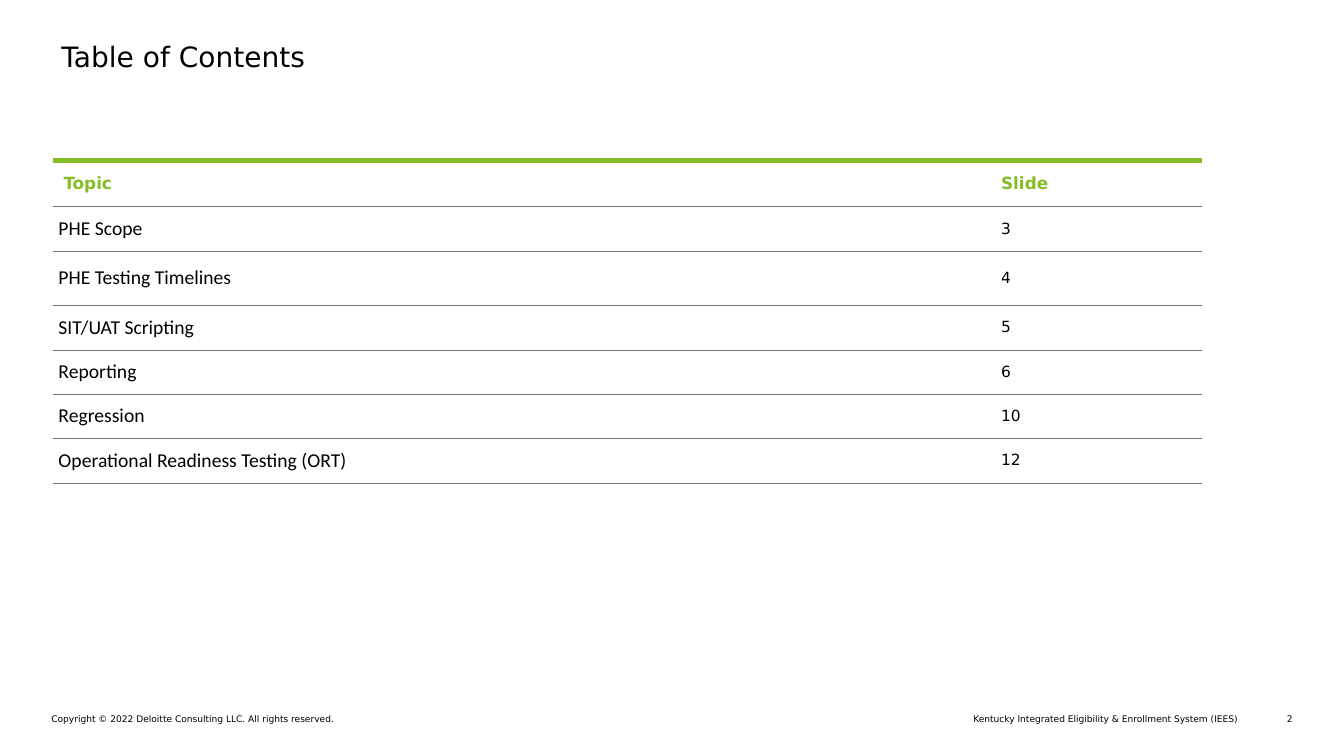
from lxml import etree
from pptx import Presentation
from pptx.dml.color import RGBColor
from pptx.enum.text import MSO_ANCHOR as Anchor, PP_ALIGN as Align
from pptx.oxml.ns import qn
from pptx.util import Inches, Pt

GREEN, GREY, BLACK = "86BC25", "75787B", "000000"
SANS, BODY = "DejaVu Sans", "Calibri"
TOPICS = [
    ("PHE Scope", "3"),
    ("PHE Testing Timelines", "4"),
    ("SIT/UAT Scripting", "5"),
    ("Reporting", "6"),
    ("Regression", "10"),
    ("Operational Readiness Testing (ORT)", "12"),
]
COLUMN_WIDTHS = [9.3, 2.09]
ROW_HEIGHTS = [0.46, 0.44, 0.54, 0.44, 0.44, 0.44, 0.44]


def color(value):
    return RGBColor.from_string(value)


def write(frame, text, size=6.5, font=SANS, fill=BLACK, bold=False, align=Align.LEFT):
    para = frame.paragraphs[0]
    para.alignment = align
    span = para.add_run()
    span.text = text
    span.font.size = Pt(size)
    span.font.name = font
    span.font.bold = bold
    span.font.color.rgb = color(fill)


def add_text(page, box, text, **style):
    frame = page.shapes.add_textbox(*map(Inches, box)).text_frame
    frame.word_wrap = True
    frame.margin_left = frame.margin_right = 0
    frame.margin_top = frame.margin_bottom = 0
    write(frame, text, **style)


def set_borders(cell, top_color, top_width):
    properties = cell._tc.get_or_add_tcPr()
    edges = [("a:lnL", None, 0), ("a:lnR", None, 0),
             ("a:lnT", top_color, top_width), ("a:lnB", GREY, 0.25)]
    for index, (tag, stroke, width) in enumerate(edges):
        line = etree.Element(qn(tag), w=str(Pt(width)))
        if stroke:
            fill = etree.SubElement(line, qn("a:solidFill"))
            etree.SubElement(fill, qn("a:srgbClr"), val=stroke)
        else:
            etree.SubElement(line, qn("a:noFill"))
        properties.insert(index, line)


def fill_cell(cell, text, inset, top_color=GREY, top_width=0.25, **style):
    cell.vertical_anchor = Anchor.MIDDLE
    cell.margin_left = cell.margin_right = Inches(inset)
    cell.margin_top = cell.margin_bottom = Inches(inset)
    cell.fill.background()
    set_borders(cell, top_color, top_width)
    write(cell.text_frame, text, **style)


def add_contents(page, left, top):
    box = (left, top, sum(COLUMN_WIDTHS), sum(ROW_HEIGHTS))
    table = page.shapes.add_table(
        len(ROW_HEIGHTS), len(COLUMN_WIDTHS), *map(Inches, box)).table
    table.first_row = table.horz_banding = False
    for column, width in zip(table.columns, COLUMN_WIDTHS):
        column.width = Inches(width)
    for row, height in zip(table.rows, ROW_HEIGHTS):
        row.height = Inches(height)
    for index, heading in enumerate(("Topic", "Slide")):
        fill_cell(table.cell(0, index), heading, 0.1, GREEN, 4.5,
                  size=12, fill=GREEN, bold=True)
    for index, (topic, number) in enumerate(TOPICS, start=1):
        fill_cell(table.cell(index, 0), topic, 0.05, size=14, font=BODY)
        fill_cell(table.cell(index, 1), number, 0.1, size=11)


def add_footer(page, top, height):
    add_text(page, (6.93, top, 5.35, height),
             "Kentucky Integrated Eligibility & Enrollment System (IEES)", align=Align.RIGHT)
    add_text(page, (0.51, top, 5.86, height),
             "Copyright © 2022 Deloitte Consulting LLC. All rights reserved.")
    add_text(page, (12.48, top, 0.34, height), "2", align=Align.RIGHT)


def main():
    deck = Presentation()
    deck.slide_width, deck.slide_height = Inches(13.33), Inches(7.5)
    page = deck.slides.add_slide(deck.slide_layouts[6])
    add_footer(page, 7.08, 0.11)
    add_text(page, (0.61, 0.39, 12.31, 0.37), "Table of Contents", size=20)
    add_contents(page, 0.53, 1.59)
    deck.save("out.pptx")


if __name__ == "__main__":
    main()
